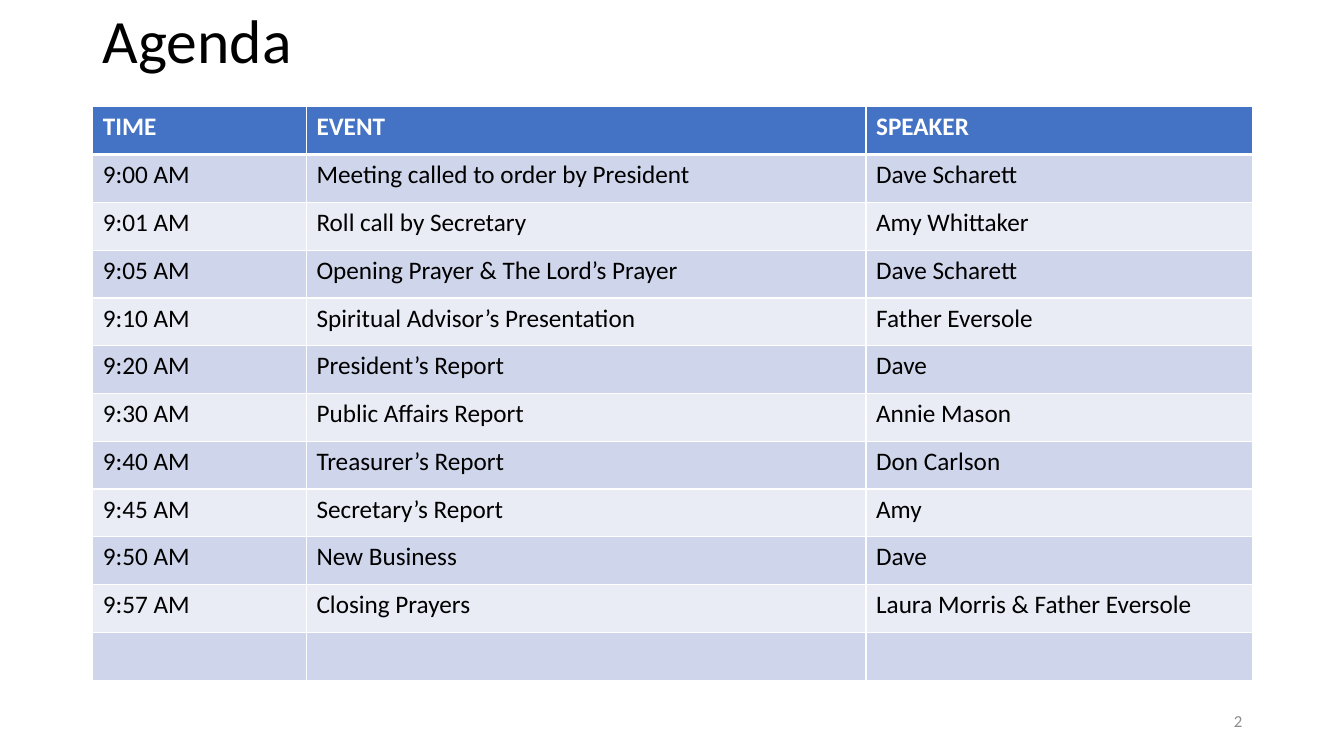
from lxml.etree import SubElement
from pptx import Presentation
from pptx.dml.color import RGBColor as Color
from pptx.enum.text import MSO_ANCHOR as Anchor, MSO_AUTO_SIZE as AutoSize, PP_ALIGN as Align
from pptx.oxml.ns import qn
from pptx.util import Inches, Pt

COLORS = {"header": "4472C4", "odd": "CFD5EA", "even": "E9EBF5",
          "black": "000000", "white": "FFFFFF", "gray": "8C8C8C"}
LEFT, WIDTH = 0.92, 11.5
ROW_HEIGHT = 5.69 / 12
COLUMN_WIDTHS = (2.12, 5.55, 3.83)
AGENDA = [
    ("TIME", "EVENT", "SPEAKER"),
    ("9:00 AM", "Meeting called to order by President", "Dave Scharett"),
    ("9:01 AM", "Roll call by Secretary", "Amy Whittaker"),
    ("9:05 AM", "Opening Prayer & The Lord’s Prayer", "Dave Scharett"),
    ("9:10 AM", "Spiritual Advisor’s Presentation", "Father Eversole"),
    ("9:20 AM", "President’s Report", "Dave"),
    ("9:30 AM", "Public Affairs Report", "Annie Mason"),
    ("9:40 AM", "Treasurer’s Report", "Don Carlson"),
    ("9:45 AM", "Secretary’s Report", "Amy"),
    ("9:50 AM", "New Business", "Dave"),
    ("9:57 AM", "Closing Prayers", "Laura Morris & Father Eversole"),
    ("", "", ""),
]


def write_text(frame, text, size=18, color="black", bold=False,
               align=Align.LEFT, anchor=Anchor.TOP, spacing=1.0):
    frame.word_wrap = True
    frame.vertical_anchor = anchor
    paragraph = frame.paragraphs[0]
    paragraph.text = text
    paragraph.alignment = align
    paragraph.line_spacing = spacing
    for font in [paragraph.font] + [run.font for run in paragraph.runs]:
        font.name = "Calibri"
        font.size = Pt(size)
        font.bold = bold
        font.color.rgb = Color.from_string(COLORS[color])


def add_border(cell, side, width):
    line = SubElement(cell._tc.get_or_add_tcPr(), qn(f"a:ln{side}"), w=str(Pt(width)))
    fill = SubElement(line, qn("a:solidFill"))
    SubElement(fill, qn("a:srgbClr"), val=COLORS["white"])


presentation = Presentation()
presentation.slide_width = Inches(13.33)
presentation.slide_height = Inches(7.5)
slide = presentation.slides.add_slide(presentation.slide_layouts[5])

title = slide.shapes.title
title.left, title.top = Inches(LEFT), Inches(0.01)
title.width, title.height = Inches(WIDTH), Inches(0.85)
title.text_frame.auto_size = AutoSize.NONE
write_text(title.text_frame, "Agenda", size=44, anchor=Anchor.MIDDLE, spacing=0.9)

table = slide.shapes.add_table(
    len(AGENDA), len(COLUMN_WIDTHS), Inches(LEFT), Inches(1.06),
    Inches(WIDTH), Inches(ROW_HEIGHT * len(AGENDA))).table
for column, width in zip(table.columns, COLUMN_WIDTHS):
    column.width = Inches(width)

for row_index, entries in enumerate(AGENDA):
    table.rows[row_index].height = Inches(ROW_HEIGHT)
    is_header = row_index == 0
    band = "header" if is_header else "odd" if row_index % 2 else "even"
    for column_index, text in enumerate(entries):
        cell = table.cell(row_index, column_index)
        write_text(cell.text_frame, text, bold=is_header,
                   color="white" if is_header else "black")
        for side in "LRTB":
            heavy = (row_index, side) in ((0, "B"), (1, "T"))
            add_border(cell, side, 3 if heavy else 1)
        cell.fill.solid()
        cell.fill.fore_color.rgb = Color.from_string(COLORS[band])

page_number = slide.shapes.add_textbox(
    Inches(LEFT + WIDTH - 3), Inches(6.95), Inches(3), Inches(0.4))
write_text(page_number.text_frame, "2", size=12, color="gray",
           align=Align.RIGHT, anchor=Anchor.MIDDLE)

presentation.save("out.pptx")
